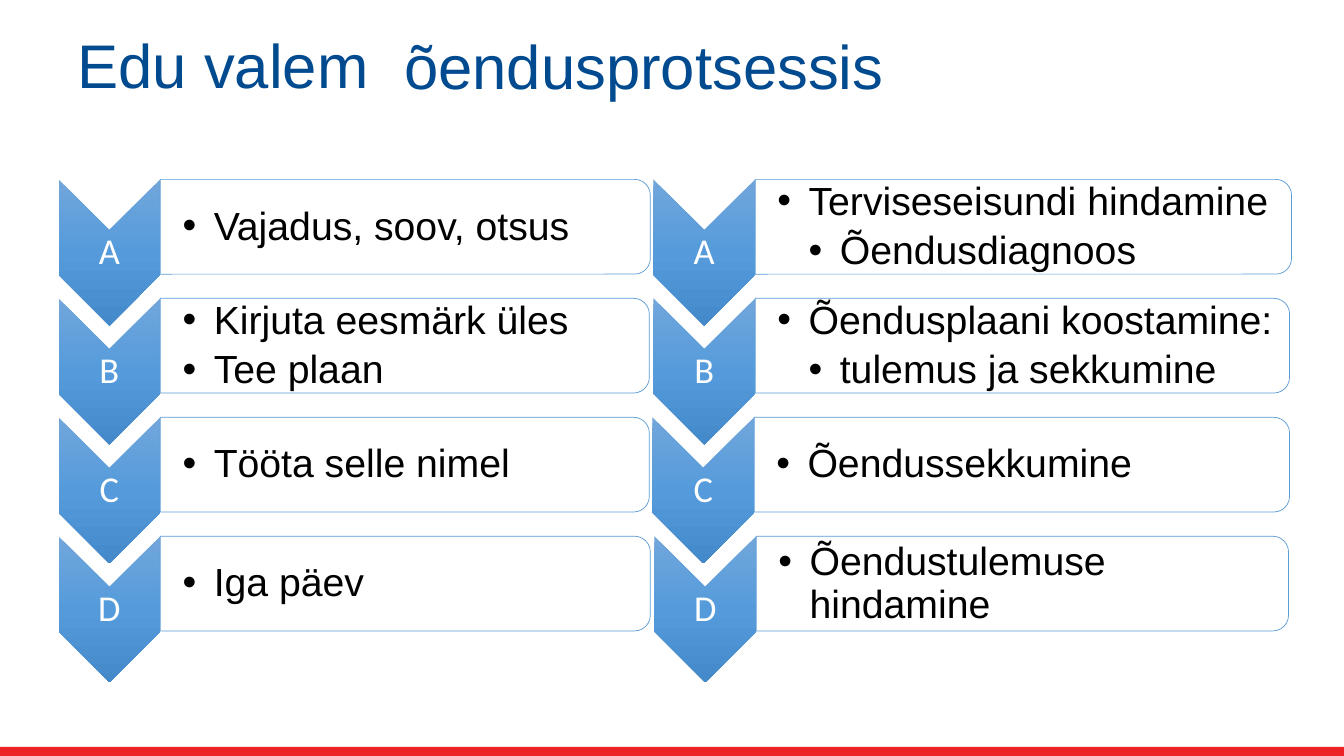
from pptx import Presentation
from pptx.dml.color import RGBColor
from pptx.enum.shapes import MSO_SHAPE
from pptx.enum.text import MSO_ANCHOR, PP_ALIGN
from pptx.oxml.ns import qn
from pptx.util import Inches, Pt
from lxml.etree import SubElement

COLORS = {
    "title": "004A8F", "text": "000000", "white": "FFFFFF", "border": "5B9BD5",
    "footer": "EC2227", "light": "71A6DB", "middle": "559BDB", "dark": "448ACA",
}
CHEVRON_STOPS = [(0, "light"), (50, "middle"), (100, "dark")]
FIRST_TOP, ROW_STEP = 1.78, 1.18
CHEVRON_WIDTH, CHEVRON_HEIGHT = 1.01, 1.45
PANEL_HEIGHT = 0.94
INDENT = 0.31

# Each step: left edge, panel width, bullets as (level, text)
FORMULA_STEPS = [
    (0.58, 4.86, [(1, "Vajadus, soov, otsus")]),
    (0.58, 4.85, [(1, "Kirjuta eesmärk üles"), (1, "Tee plaan")]),
    (0.58, 4.85, [(1, "Tööta selle nimel")]),
    (0.58, 4.86, [(1, "Iga päev")]),
]
NURSING_STEPS = [
    (6.48, 5.32, [(1, "Terviseseisundi hindamine"), (2, "Õendusdiagnoos")]),
    (6.48, 5.30, [(1, "Õendusplaani koostamine:"), (2, "tulemus ja sekkumine")]),
    (6.47, 5.31, [(1, "Õendussekkumine")]),
    (6.49, 5.28, [(1, "Õendustulemuse hindamine")]),
]


class SlideBuilder:
    def __init__(self, page):
        self.page = page

    def color(self, name):
        return RGBColor.from_string(COLORS[name])

    def shape(self, kind, left, top, width, height, fill):
        shape = self.page.shapes.add_shape(
            kind, Inches(left), Inches(top), Inches(width), Inches(height))
        shape.shadow.inherit = False
        shape.fill.solid()
        shape.fill.fore_color.rgb = self.color(fill)
        shape.line.fill.background()
        return shape

    def turned_shape(self, kind, left, top, width, height, fill):
        """Add a shape turned by 90 degrees that covers the given area."""
        shift = (width - height) / 2
        shape = self.shape(kind, left + shift, top - shift, height, width, fill)
        shape.rotation = 90
        return shape

    def chevron(self, left, top):
        shape = self.turned_shape(
            MSO_SHAPE.CHEVRON, left, top, CHEVRON_WIDTH, CHEVRON_HEIGHT, "middle")
        shape.fill.gradient()
        shape.fill.gradient_angle = 270
        gradient = shape.element.spPr.find(qn("a:gradFill"))
        gradient.set("rotWithShape", "0")
        stops = gradient.find(qn("a:gsLst"))
        for stop in list(stops):
            stops.remove(stop)
        for percent, name in CHEVRON_STOPS:
            stop = SubElement(stops, qn("a:gs"), pos=str(percent * 1000))
            SubElement(stop, qn("a:srgbClr"), val=COLORS[name])

    def panel(self, left, top, width):
        shape = self.turned_shape(
            MSO_SHAPE.ROUND_2_SAME_RECTANGLE, left, top, width, PANEL_HEIGHT, "white")
        fill_color = shape.element.spPr.find(qn("a:solidFill")).find(qn("a:srgbClr"))
        SubElement(fill_color, qn("a:alpha"), val="90000")
        shape.line.color.rgb = self.color("border")
        shape.line.width = Pt(0.5)

    def text_frame(self, left, top, width, height, left_inset=0.02, inset=0.02,
                   anchor=MSO_ANCHOR.MIDDLE):
        box = self.page.shapes.add_textbox(
            Inches(left), Inches(top), Inches(width), Inches(height))
        frame = box.text_frame
        frame.word_wrap = True
        frame.vertical_anchor = anchor
        frame.margin_left = Inches(left_inset)
        frame.margin_top = frame.margin_right = frame.margin_bottom = Inches(inset)
        return frame

    def fill_paragraph(self, para, text, size, color, font="Arial"):
        para.text = text
        para.line_spacing = 0.9
        para.font.size = Pt(size)
        para.font.name = font
        para.font.color.rgb = self.color(color)

    def heading(self, text, left, top, width):
        frame = self.text_frame(left, top, width, 1.25, 0.1, 0.05, MSO_ANCHOR.TOP)
        self.fill_paragraph(frame.paragraphs[0], text, 44, "title")

    def letter(self, text, left, top):
        frame = self.text_frame(left, top, CHEVRON_WIDTH, 0.43)
        para = frame.paragraphs[0]
        self.fill_paragraph(para, text, 26, "white", "Calibri")
        para.alignment = PP_ALIGN.CENTER

    def bullets(self, items, left, top, width):
        frame = self.text_frame(left, top, width, 0.85, left_inset=0.22)
        for index, (level, text) in enumerate(items):
            para = frame.add_paragraph() if index else frame.paragraphs[0]
            para.level = level
            properties = para._p.get_or_add_pPr()
            properties.set("marL", str(Inches(level * INDENT)))
            properties.set("indent", str(Inches(-INDENT)))
            SubElement(properties, qn("a:buFont"), typeface="Arial")
            SubElement(properties, qn("a:buChar"), char="•")
            self.fill_paragraph(para, text, 28, "text")
            para.space_after = Pt(5)

    def step(self, letter, left, top, width, items):
        panel_left = left + CHEVRON_WIDTH
        self.chevron(left, top)
        self.letter(letter, left, top + 0.51)
        self.panel(panel_left, top, width)
        self.bullets(items, panel_left, top + 0.05, width - 0.04)


def main():
    deck = Presentation()
    deck.slide_width, deck.slide_height = Inches(13.33), Inches(7.5)
    builder = SlideBuilder(deck.slides.add_slide(deck.slide_layouts[6]))
    builder.shape(MSO_SHAPE.RECTANGLE, 0, 7.41, 13.33, 0.09, "footer")
    for steps in (FORMULA_STEPS, NURSING_STEPS):
        for row, (letter, (left, width, items)) in enumerate(zip("ABCD", steps)):
            builder.step(letter, left, FIRST_TOP + row * ROW_STEP, width, items)
    builder.heading("Edu valem", 0.67, 0.3, 3.43)
    builder.heading("õendusprotsessis", 3.91, 0.31, 6.24)
    deck.save("out.pptx")


if __name__ == "__main__":
    main()
